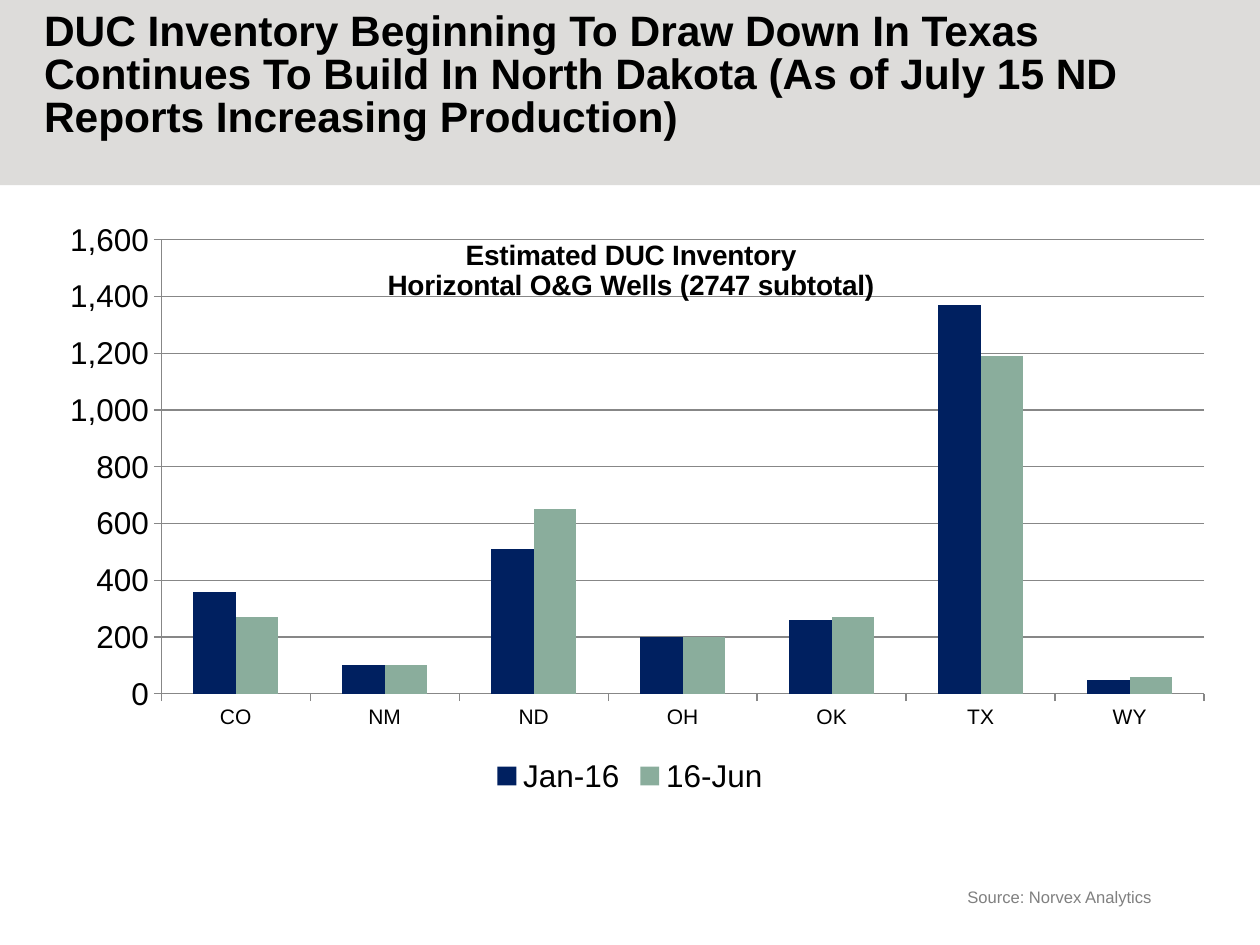
from lxml.etree import SubElement
from pptx import Presentation
from pptx.chart.data import CategoryChartData
from pptx.dml.color import RGBColor
from pptx.enum.chart import XL_CHART_TYPE, XL_LEGEND_POSITION, XL_TICK_MARK
from pptx.enum.shapes import MSO_SHAPE
from pptx.enum.text import PP_ALIGN
from pptx.oxml.ns import qn
from pptx.util import Inches, Pt

BLACK = RGBColor(0x00, 0x00, 0x00)
GRAY = RGBColor(0x80, 0x80, 0x80)
AXIS_GRAY = RGBColor(0x87, 0x87, 0x87)
BAND = RGBColor(0xDD, 0xDC, 0xDA)
NAVY = RGBColor(0x00, 0x20, 0x60)
SAGE = RGBColor(0x8A, 0xAD, 0x9C)
FONT = "Arial"
WIDTH, HEIGHT = 10, 7.5
MARGIN = 0.35
CONTENT_W = WIDTH - 2 * MARGIN

STATES = ["CO", "NM", "ND", "OH", "OK", "TX", "WY"]
INVENTORY = [
    ("Jan-16", [360, 100, 510, 200, 260, 1370, 50], NAVY),
    ("16-Jun", [270, 100, 650, 200, 270, 1190, 60], SAGE),
]


def set_font(font, size, color=BLACK, bold=False):
    font.name, font.size, font.bold = FONT, Pt(size), bold
    font.color.rgb = color


def add_text(slide, box, text, size, color=BLACK, bold=False,
             align=PP_ALIGN.LEFT, spacing=1.0):
    tf = slide.shapes.add_textbox(*map(Inches, box)).text_frame
    tf.word_wrap = True
    tf.margin_left = tf.margin_right = tf.margin_top = tf.margin_bottom = 0
    p = tf.paragraphs[0]
    p.text = text
    p.alignment, p.line_spacing = align, spacing
    set_font(p.font, size, color, bold)


def add_header(slide, box):
    sp = slide.shapes.add_shape(MSO_SHAPE.RECTANGLE, *map(Inches, box))
    sp.shadow.inherit = False
    sp.fill.solid()
    sp.fill.fore_color.rgb = BAND
    sp.line.fill.background()
    left, top, width, _ = box
    add_text(slide, (left + MARGIN, top + 0.09, width - 2 * MARGIN, 0.65),
             "DUC Inventory Beginning To Draw Down In Texas\v"
             "Continues To Build In North Dakota "
             "(As of July 15 ND Reports Increasing Production)",
             24.3, bold=True, spacing=0.85)


def set_layout(parent, position, **values):
    for old in parent.findall(qn("c:layout")):
        parent.remove(old)
    layout = parent.makeelement(qn("c:layout"))
    parent.insert(position, layout)
    manual = SubElement(layout, qn("c:manualLayout"))
    for tag, value in values.items():
        SubElement(manual, qn(f"c:{tag}")).set("val", str(value))


def add_chart_title(chart):
    tf = chart.chart_title.text_frame
    tf.text = "Estimated DUC Inventory\nHorizontal O&G Wells (2747 subtotal)"
    for p in tf.paragraphs:
        set_font(p.font, 16, bold=True)
    title = chart.chart_title._element
    set_layout(title, 1, xMode="edge", yMode="edge", x=0.29, y=0.04)
    for old in title.findall(qn("c:overlay")):
        title.remove(old)
    overlay = title.makeelement(qn("c:overlay"), {"val": "1"})
    title.insert(2, overlay)


def style_axis(axis, size):
    axis.major_tick_mark = XL_TICK_MARK.OUTSIDE
    axis.minor_tick_mark = XL_TICK_MARK.NONE
    axis.format.line.color.rgb = AXIS_GRAY
    set_font(axis.tick_labels.font, size)


def add_inventory_chart(slide, box):
    data = CategoryChartData(number_format="#,##0")
    data.categories = STATES
    for name, values, _ in INVENTORY:
        data.add_series(name, values)
    chart = slide.shapes.add_chart(
        XL_CHART_TYPE.COLUMN_CLUSTERED, *map(Inches, box), data).chart
    set_font(chart.font, 18)
    add_chart_title(chart)

    plot = chart.plots[0]
    plot.gap_width, plot.overlap = 150, 0
    plot.vary_by_categories = False
    for series, (_, _, color) in zip(plot.series, INVENTORY):
        series.format.fill.solid()
        series.format.fill.fore_color.rgb = color

    style_axis(chart.category_axis, 12)
    axis = chart.value_axis
    style_axis(axis, 18)
    axis.minimum_scale, axis.maximum_scale, axis.major_unit = 0, 1600, 200
    axis.tick_labels.number_format = "#,##0"
    axis.tick_labels.number_format_is_linked = False
    axis.has_major_gridlines = True
    axis.major_gridlines.format.line.color.rgb = AXIS_GRAY

    chart.has_legend = True
    chart.legend.position = XL_LEGEND_POSITION.BOTTOM
    chart.legend.include_in_layout = False
    set_font(chart.legend.font, 18)

    set_layout(chart._chartSpace.chart.plotArea, 0, layoutTarget="inner",
               xMode="edge", yMode="edge", x=0.1, y=0.05, w=0.89, h=0.77)


def add_source(slide, box):
    add_text(slide, box, "Source: Norvex Analytics", 9.5, GRAY,
             align=PP_ALIGN.RIGHT)


def main():
    prs = Presentation()
    prs.slide_width, prs.slide_height = Inches(WIDTH), Inches(HEIGHT)
    slide = prs.slides.add_slide(prs.slide_layouts[6])
    add_header(slide, (0, 0, WIDTH, 1.47))
    add_inventory_chart(slide, (MARGIN, 1.67, CONTENT_W, 4.68))
    add_source(slide, (5.94, 7.04, 3.2, 0.24))
    prs.save("out.pptx")


if __name__ == "__main__":
    main()
